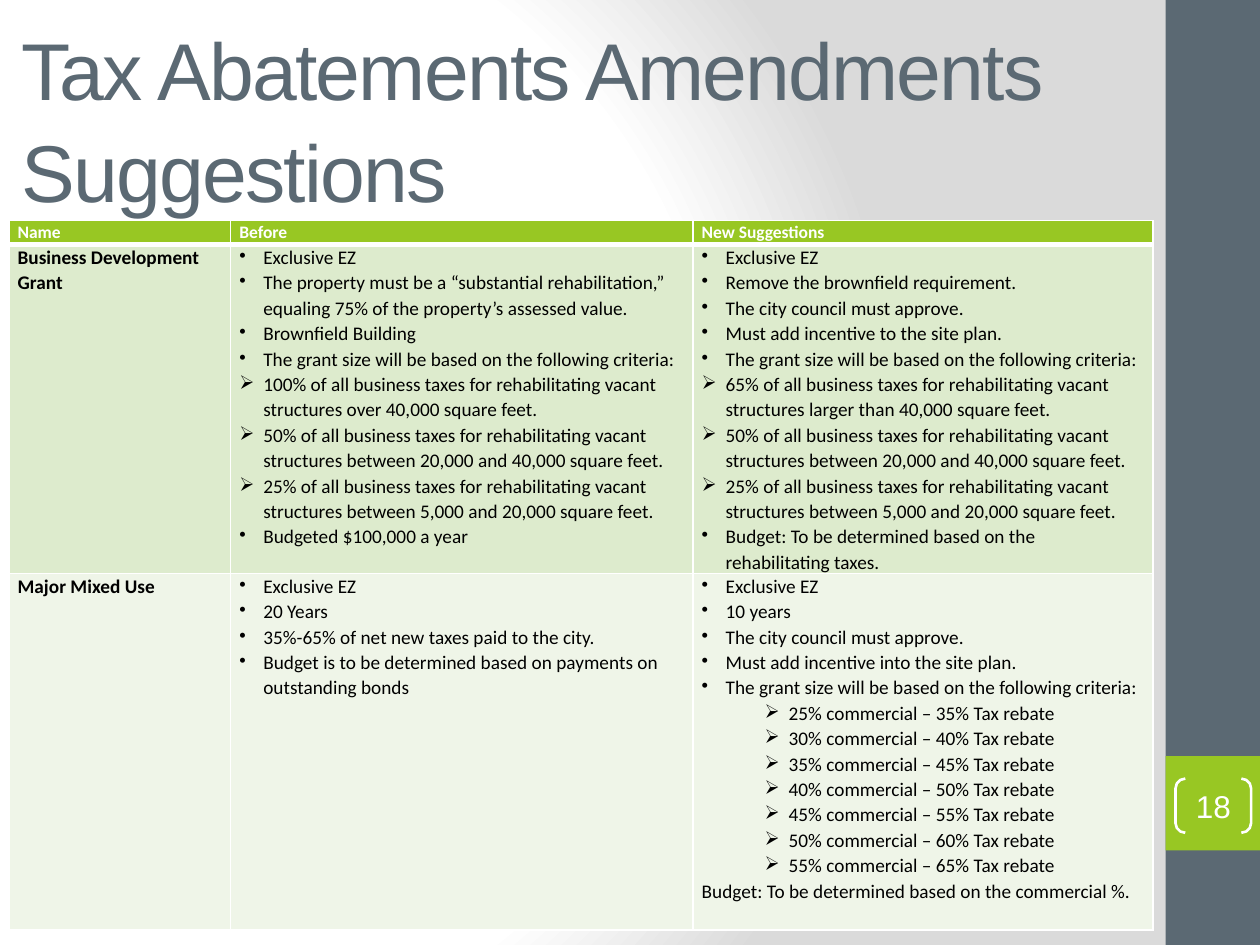
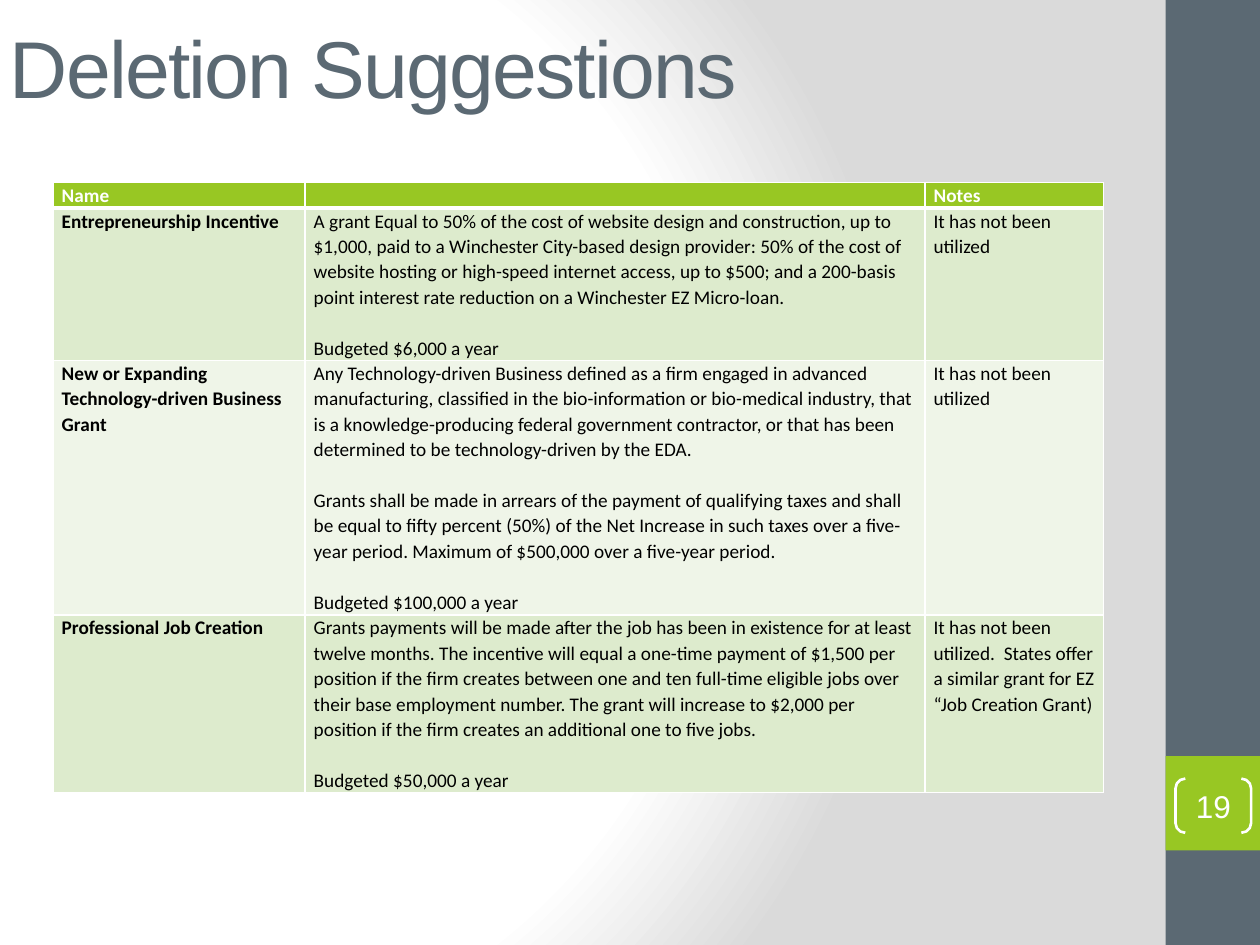
from dataclasses import dataclass

from lxml import etree
from pptx import Presentation
from pptx import util as u
from pptx.dml.color import RGBColor
from pptx.enum import shapes, text
from pptx.oxml import parse_xml
from pptx.oxml import ns

HUES = {
    "slate": "5B6973", "lime": "98C723", "white": "FFFFFF", "black": "000000",
    "grey": "DADADA", "leaf": "DDEBCD", "mist": "EFF5E8",
}
HEAD, BODY = "Arial", "Calibri"


@dataclass
class Line:
    text: str
    mark: str = ""
    left: float = 0.0
    gap: float = 0.0


@dataclass
class Band:
    top: float
    height: float
    hue: str


@dataclass
class Grid:
    left: float
    top: float
    cols: list[float]
    rows: list[float]
    size: int
    cells: list[list[list[Line]]]


@dataclass
class Page:
    title: str
    box: tuple[float, float, float, float]
    number: int
    grid: Grid


BANDS = [Band(0, 7.5, "slate"), Band(6, 0.75, "lime")]


def color(name: str) -> RGBColor:
    return RGBColor.from_string(HUES[name])


def plain(*words: str) -> list[Line]:
    return [Line(word, gap=14.5 if i else 0) for i, word in enumerate(words)]


def dots(*words: str) -> list[Line]:
    return [Line(word, "•", 0.19) for word in words]


def darts(*words: str, left: float = 0.19) -> list[Line]:
    return [Line(word, "➢", left) for word in words]


def style(para, face: str, size: int, hue: str, bold: bool = False) -> None:
    font = para.font
    font.name, font.size, font.bold = face, u.Pt(size), bold
    font.color.rgb = color(hue)


def paint(master) -> None:
    fill = master.background.fill
    fill.gradient()
    stops = [(0, "white"), (75, "white"), (100, "grey")]
    marks = "".join(
        f'<a:gs pos="{pos * 1000}"><a:srgbClr val="{HUES[hue]}"/></a:gs>'
        for pos, hue in stops)
    grad = parse_xml(
        f'<a:gradFill rotWithShape="1" {ns.nsdecls("a")}><a:gsLst>{marks}</a:gsLst>'
        '<a:path path="circle"><a:fillToRect l="20000" t="50000" r="100000" b="50000"/>'
        '</a:path></a:gradFill>')
    old = next(master.element.iter(ns.qn("a:gradFill")))
    old.getparent().replace(old, grad)


def add_band(slide, band: Band) -> None:
    shape = slide.shapes.add_shape(
        shapes.MSO_SHAPE.RECTANGLE, u.Inches(9.25), u.Inches(band.top),
        u.Inches(0.75), u.Inches(band.height))
    shape.shadow.inherit = False
    shape.fill.solid()
    shape.fill.fore_color.rgb = color(band.hue)
    shape.line.fill.background()


def add_title(slide, page: Page) -> None:
    frame = slide.shapes.add_textbox(*map(u.Inches, page.box)).text_frame
    frame.word_wrap = True
    frame.vertical_anchor = text.MSO_ANCHOR.MIDDLE
    para = frame.paragraphs[0]
    para.line_spacing = 1.06
    run = para.add_run()
    run.text = page.title
    run._r.get_or_add_rPr().set("spc", "-100")
    style(para, HEAD, 46, "slate")


def add_number(slide, number: int) -> None:
    shape = slide.shapes.add_shape(
        shapes.MSO_SHAPE.DOUBLE_BRACKET, u.Inches(9.33), u.Inches(6.18),
        u.Inches(0.6), u.Inches(0.43))
    shape.adjustments[0] = 0.18
    shape.shadow.inherit = False
    shape.fill.background()
    shape.line.color.rgb = color("white")
    shape.line.width = u.Pt(1.5)
    frame = shape.text_frame
    frame.margin_left = frame.margin_right = frame.margin_top = frame.margin_bottom = 0
    frame.vertical_anchor = text.MSO_ANCHOR.MIDDLE
    para = frame.paragraphs[0]
    para.text = str(number)
    para.alignment = text.PP_ALIGN.CENTER
    style(para, HEAD, 18, "white")


def add_edges(cell, row: int) -> None:
    props = cell._tc.get_or_add_tcPr()
    thick = {"T": 3 if row == 1 else 1, "B": 3 if row == 0 else 1}
    for i, side in enumerate("LRTB"):
        width = u.Pt(thick.get(side, 1))
        props.insert(i, parse_xml(
            f'<a:ln{side} w="{width}" {ns.nsdecls("a")}><a:solidFill>'
            f'<a:srgbClr val="{HUES["white"]}"/></a:solidFill></a:ln{side}>'))


def write(cell, lines: list[Line], size: int, hue: str, bold: bool) -> None:
    frame = cell.text_frame
    for i, line in enumerate(lines):
        para = frame.add_paragraph() if i else frame.paragraphs[0]
        para.text = line.text
        para.line_spacing = 1.07
        if line.gap:
            para.space_before = u.Pt(line.gap)
        if line.mark:
            para.level = int(line.left > 0.5)
            props = para._p.get_or_add_pPr()
            props.set("marL", str(u.Inches(line.left)))
            props.set("indent", str(u.Inches(-0.19)))
            etree.SubElement(props, ns.qn("a:buChar"), char=line.mark)
        style(para, BODY, size, hue, bold)


def add_grid(slide, grid: Grid) -> None:
    table = slide.shapes.add_table(
        len(grid.rows), len(grid.cols), u.Inches(grid.left), u.Inches(grid.top),
        u.Inches(sum(grid.cols)), u.Inches(sum(grid.rows))).table
    for col, width in zip(table.columns, grid.cols):
        col.width = u.Inches(width)
    for r, height in enumerate(grid.rows):
        table.rows[r].height = u.Inches(height)
        fill = "lime" if r == 0 else "leaf" if r % 2 else "mist"
        for c, lines in enumerate(grid.cells[r]):
            cell = table.cell(r, c)
            cell.margin_left = cell.margin_right = u.Inches(0.07)
            cell.margin_top = cell.margin_bottom = 0
            cell.fill.solid()
            cell.fill.fore_color.rgb = color(fill)
            add_edges(cell, r)
            write(cell, lines, 11 if r else grid.size,
                  "black" if r else "white", r == 0 or c == 0)


CRITERIA = "The grant size will be based on the following criteria:"
APPROVE = "The city council must approve."
UNUSED = "It has not been utilized"
TAXES = "of all business taxes for rehabilitating vacant structures"
TIERS = [f"50% {TAXES} between 20,000 and 40,000 square feet.",
         f"25% {TAXES} between 5,000 and 20,000 square feet."]
REBATES = [f"{share}% commercial – {share + 10}% Tax rebate" for share in range(25, 60, 5)]

PAGES = [
    Page("Tax Abatements Amendments Suggestions", (0.07, 0.3, 9.08, 1.25), 18, Grid(
        0.07, 1.75, [1.76, 3.67, 3.65], [0.19, 2.61, 2.83], 10, [
            [plain("Name"), plain("Before"), plain("New Suggestions")],
            [plain("Business Development Grant"),
             dots("Exclusive EZ",
                  "The property must be a “substantial rehabilitation,” equaling 75% "
                  "of the property’s assessed value.",
                  "Brownfield Building", CRITERIA)
             + darts(f"100% {TAXES} over 40,000 square feet.", *TIERS)
             + dots("Budgeted $100,000 a year"),
             dots("Exclusive EZ", "Remove the brownfield requirement.", APPROVE,
                  "Must add incentive to the site plan.", CRITERIA)
             + darts(f"65% {TAXES} larger than 40,000 square feet.", *TIERS)
             + dots("Budget: To be determined based on the rehabilitating taxes.")],
            [plain("Major Mixed Use"),
             dots("Exclusive EZ", "20 Years",
                  "35%-65% of net new taxes paid to the city.",
                  "Budget is to be determined based on payments on outstanding bonds"),
             dots("Exclusive EZ", "10 years", APPROVE,
                  "Must add incentive into the site plan.", CRITERIA)
             + darts(*REBATES, left=0.69)
             + plain("Budget: To be determined based on the commercial %.")],
        ])),
    Page("Deletion Suggestions", (-0.02, -0.12, 8.33, 1.25), 19, Grid(
        0.42, 1.45, [2, 4.92, 1.42], [0.2, 1.21, 2.02, 1.41], 11, [
            [plain("Name"), plain(""), plain("Notes")],
            [plain("Entrepreneurship Incentive"),
             plain("A grant Equal to 50% of the cost of website design and construction, "
                   "up to $1,000, paid to a Winchester City-based design provider: 50% of "
                   "the cost of website hosting or high-speed internet access, up to $500; "
                   "and a 200-basis point interest rate reduction on a Winchester EZ "
                   "Micro-loan.",
                   "Budgeted $6,000 a year"),
             plain(UNUSED)],
            [plain("New or Expanding Technology-driven Business Grant"),
             plain("Any Technology-driven Business defined as a firm engaged in advanced "
                   "manufacturing, classified in the bio-information or bio-medical "
                   "industry, that is a knowledge-producing federal government contractor, "
                   "or that has been determined to be technology-driven by the EDA.",
                   "Grants shall be made in arrears of the payment of qualifying taxes and "
                   "shall be equal to fifty percent (50%) of the Net Increase in such taxes "
                   "over a five-year period. Maximum of $500,000 over a five-year period.",
                   "Budgeted $100,000 a year"),
             plain(UNUSED)],
            [plain("Professional Job Creation"),
             plain("Grants payments will be made after the job has been in existence for at "
                   "least twelve months. The incentive will equal a one-time payment of "
                   "$1,500 per position if the firm creates between one and ten full-time "
                   "eligible jobs over their base employment number. The grant will "
                   "increase to $2,000 per position if the firm creates an additional one "
                   "to five jobs.",
                   "Budgeted $50,000 a year"),
             plain(f"{UNUSED}.  States offer a similar grant for EZ “Job Creation Grant)")],
        ])),
]


def main() -> None:
    deck = Presentation()
    deck.slide_width, deck.slide_height = u.Inches(10), u.Inches(7.5)
    paint(deck.slide_master)
    for page in PAGES:
        slide = deck.slides.add_slide(deck.slide_layouts[6])
        for band in BANDS:
            add_band(slide, band)
        add_title(slide, page)
        add_grid(slide, page.grid)
        add_number(slide, page.number)
    deck.save("out.pptx")


if __name__ == "__main__":
    main()
